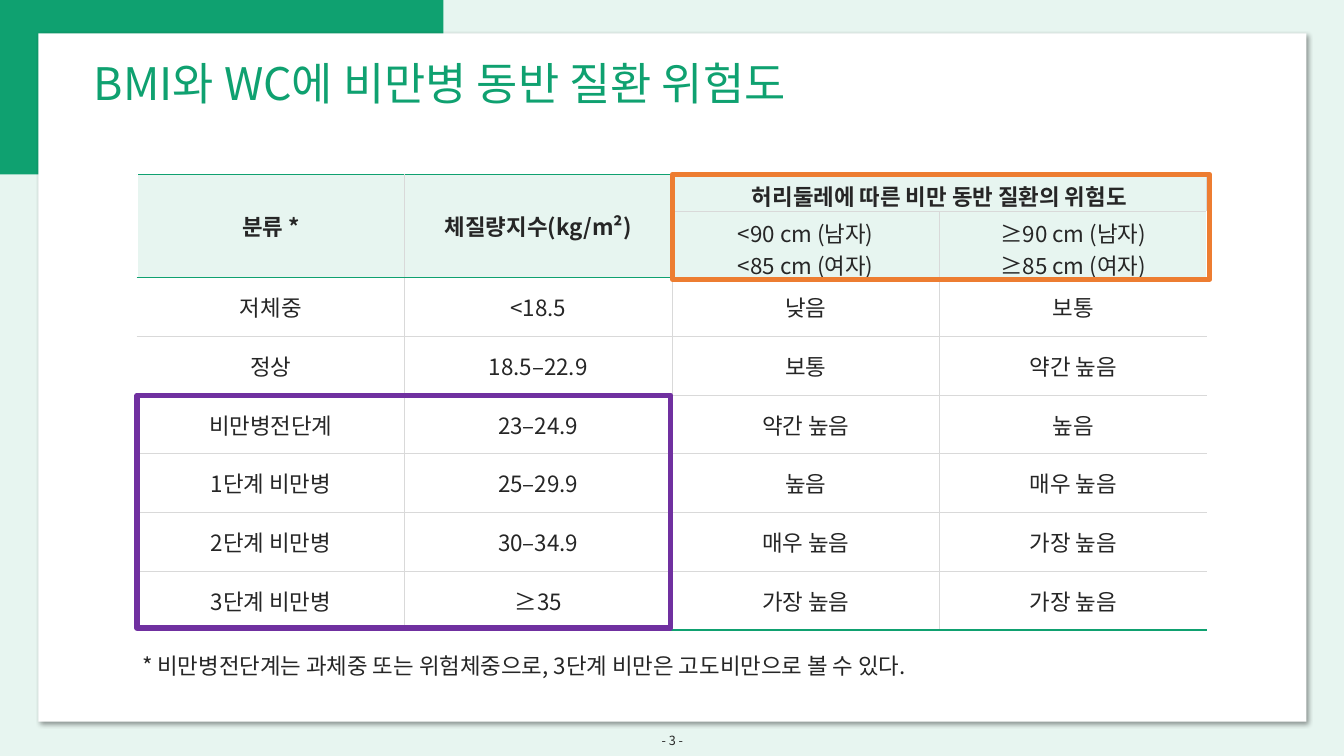
from dataclasses import dataclass
from itertools import product

from lxml.etree import SubElement
from pptx import Presentation
from pptx.dml.color import RGBColor
from pptx.enum.shapes import MSO_SHAPE
from pptx.enum.text import MSO_ANCHOR, MSO_AUTO_SIZE, PP_ALIGN
from pptx.oxml import parse_xml
from pptx.oxml.ns import nsdecls, qn
from pptx.util import Inches, Pt

FONT = "Noto Sans CJK KR"
GREEN, MINT, WHITE = "0FA170", "E7F5F0", "FFFFFF"
INK, GRID, ORANGE, PURPLE = "262626", "D9D9D9", "ED7D31", "7030A0"

WIDTH, HEIGHT = Inches(13.33), Inches(7.5)
TABLE_LEFT, TABLE_TOP, COLUMN = 10.2, 23.07, 19.9
ROWS = [4.93, 8.72] + [7.77] * 6

HEADER = [
    ["분류 *", "체질량지수(kg/m²)", "허리둘레에 따른 비만 동반 질환의 위험도", ""],
    ["", "", "<90 cm (남자)\n<85 cm (여자)", "≥90 cm (남자)\n≥85 cm (여자)"],
]
BODY = [
    ["저체중", "<18.5", "낮음", "보통"],
    ["정상", "18.5–22.9", "보통", "약간 높음"],
    ["비만병전단계", "23–24.9", "약간 높음", "높음"],
    ["1단계 비만병", "25–29.9", "높음", "매우 높음"],
    ["2단계 비만병", "30–34.9", "매우 높음", "가장 높음"],
    ["3단계 비만병", "≥35", "가장 높음", "가장 높음"],
]
SHADOW = (
    f'<a:effectLst {nsdecls("a")}><a:outerShdw blurRad="50800" dist="38100" dir="2700000" '
    'algn="tl" rotWithShape="0"><a:srgbClr val="000000"><a:alpha val="40000"/></a:srgbClr>'
    "</a:outerShdw></a:effectLst>"
)


@dataclass
class Frame:
    """A rectangle in percent of the slide's width and height."""

    left: float
    top: float
    width: float
    height: float

    def lengths(self) -> tuple:
        """Return left, top, width and height as slide lengths."""
        return across(self.left), down(self.top), across(self.width), down(self.height)


@dataclass
class Panel:
    """A rectangle with an optional fill and an optional outline."""

    frame: Frame
    fill: str = ""
    line: str = ""


@dataclass
class Style:
    """The look of a piece of text."""

    size: float
    color: str = INK
    bold: bool = False
    align: PP_ALIGN = PP_ALIGN.LEFT


BACKDROP = Panel(Frame(0, 0, 33, 23.07), fill=GREEN)
CARD = Panel(Frame(2.85, 4.4, 94.35, 91.07), fill=WHITE)
HIGHLIGHTS = [
    Panel(Frame(50.03, TABLE_TOP, 39.98, 13.87), line=ORANGE),
    Panel(Frame(TABLE_LEFT, 52.27, 39.68, 30.8), line=PURPLE),
]


def across(share: float) -> int:
    """Turn a percentage of the slide's width into a length."""
    return round(WIDTH * share / 100)


def down(share: float) -> int:
    """Turn a percentage of the slide's height into a length."""
    return round(HEIGHT * share / 100)


def paint(color: str) -> RGBColor:
    """Turn a hex string into a colour."""
    return RGBColor.from_string(color)


def write(text_frame, text: str, style: Style) -> None:
    """Fill a text frame with one paragraph per line of text."""
    for index, line in enumerate(text.split("\n")):
        para = text_frame.add_paragraph() if index else text_frame.paragraphs[0]
        para.alignment = style.align
        span = para.add_run()
        span.text = line
        span.font.name = FONT
        span.font.size = Pt(style.size)
        span.font.bold = style.bold
        span.font.color.rgb = paint(style.color)
        SubElement(span.font._element, qn("a:ea"), typeface=FONT)


def add_panel(page, panel: Panel):
    """Draw a rectangle."""
    box = page.shapes.add_shape(MSO_SHAPE.RECTANGLE, *panel.frame.lengths())
    box.shadow.inherit = False
    if panel.fill:
        box.fill.solid()
        box.fill.fore_color.rgb = paint(panel.fill)
    else:
        box.fill.background()
    if panel.line:
        box.line.color.rgb = paint(panel.line)
        box.line.width = Pt(3.75)
    else:
        box.line.fill.background()
    return box


def add_text(page, frame: Frame, text: str, style: Style, anchor=MSO_ANCHOR.TOP) -> None:
    """Draw a wrapping text box."""
    box = page.shapes.add_textbox(*frame.lengths())
    box.text_frame.word_wrap = True
    box.text_frame.vertical_anchor = anchor
    write(box.text_frame, text, style)


def set_title(title, text: str) -> None:
    """Place and format the title placeholder."""
    title.left, title.top, title.width, title.height = Frame(6.23, 7.47, 69.9, 8.53).lengths()
    title.text_frame.word_wrap = True
    title.text_frame.auto_size = MSO_AUTO_SIZE.SHAPE_TO_FIT_TEXT
    title.text_frame.vertical_anchor = MSO_ANCHOR.TOP
    write(title.text_frame, text, Style(32, GREEN))
    title.text_frame.paragraphs[0].line_spacing = 0.9


def set_border(cell, side: str, color: str) -> None:
    """Give one side of a cell a line; grid lines are thinner."""
    width = Pt(0.75 if color == GRID else 1)
    line = SubElement(cell._tc.get_or_add_tcPr(), qn(f"a:{side}"), w=str(width))
    fill = SubElement(line, qn("a:solidFill"))
    SubElement(fill, qn("a:srgbClr"), val=color)


def add_risk_table(page) -> None:
    """Draw the table of disease risk by body mass and waist."""
    cells = HEADER + BODY
    count, columns = len(cells), len(cells[0])
    frame = Frame(TABLE_LEFT, TABLE_TOP, COLUMN * columns, sum(ROWS))
    table = page.shapes.add_table(count, columns, *frame.lengths()).table
    for column in table.columns:
        column.width = across(COLUMN)
    for row, share in zip(table.rows, ROWS):
        row.height = down(share)
    for row, column in product(range(count), range(columns)):
        cell = table.cell(row, column)
        cell.vertical_anchor = MSO_ANCHOR.MIDDLE
        write(cell.text_frame, cells[row][column], Style(16, bold=row == 0, align=PP_ALIGN.CENTER))
        set_border(cell, "lnL", GRID if column else WHITE)
        set_border(cell, "lnR", GRID if column < columns - 1 else WHITE)
        set_border(cell, "lnT", GREEN if row in (0, len(HEADER)) else GRID)
        set_border(cell, "lnB", GREEN if row in (len(HEADER) - 1, count - 1) else GRID)
        cell.fill.solid()
        cell.fill.fore_color.rgb = paint(MINT if row < len(HEADER) else WHITE)
    for column in (0, 1):
        table.cell(0, column).merge(table.cell(1, column))
    table.cell(0, 2).merge(table.cell(0, 3))


def main() -> None:
    """Build and save the slide."""
    deck = Presentation()
    deck.slide_width, deck.slide_height = WIDTH, HEIGHT
    page = deck.slides.add_slide(deck.slide_layouts[5])
    page.background.fill.solid()
    page.background.fill.fore_color.rgb = paint(MINT)
    add_text(page, Frame(40.88, 95.33, 18.3, 5.33), "- 3 -",
             Style(9, align=PP_ALIGN.CENTER), MSO_ANCHOR.MIDDLE)
    add_panel(page, BACKDROP)
    card = add_panel(page, CARD)
    properties = card.element.spPr
    properties.replace(properties.find(qn("a:effectLst")), parse_xml(SHADOW))
    title = page.shapes.title
    set_title(title, "BMI와 WC에 비만병 동반 질환 위험도")
    card.element.addnext(title.element)
    add_risk_table(page)
    add_text(page, Frame(9.83, 85.6, 76.35, 4.93),
             "* 비만병전단계는 과체중 또는 위험체중으로, 3단계 비만은 고도비만으로 볼 수 있다.", Style(16))
    for highlight in HIGHLIGHTS:
        add_panel(page, highlight)
    deck.save("out.pptx")


if __name__ == "__main__":
    main()
